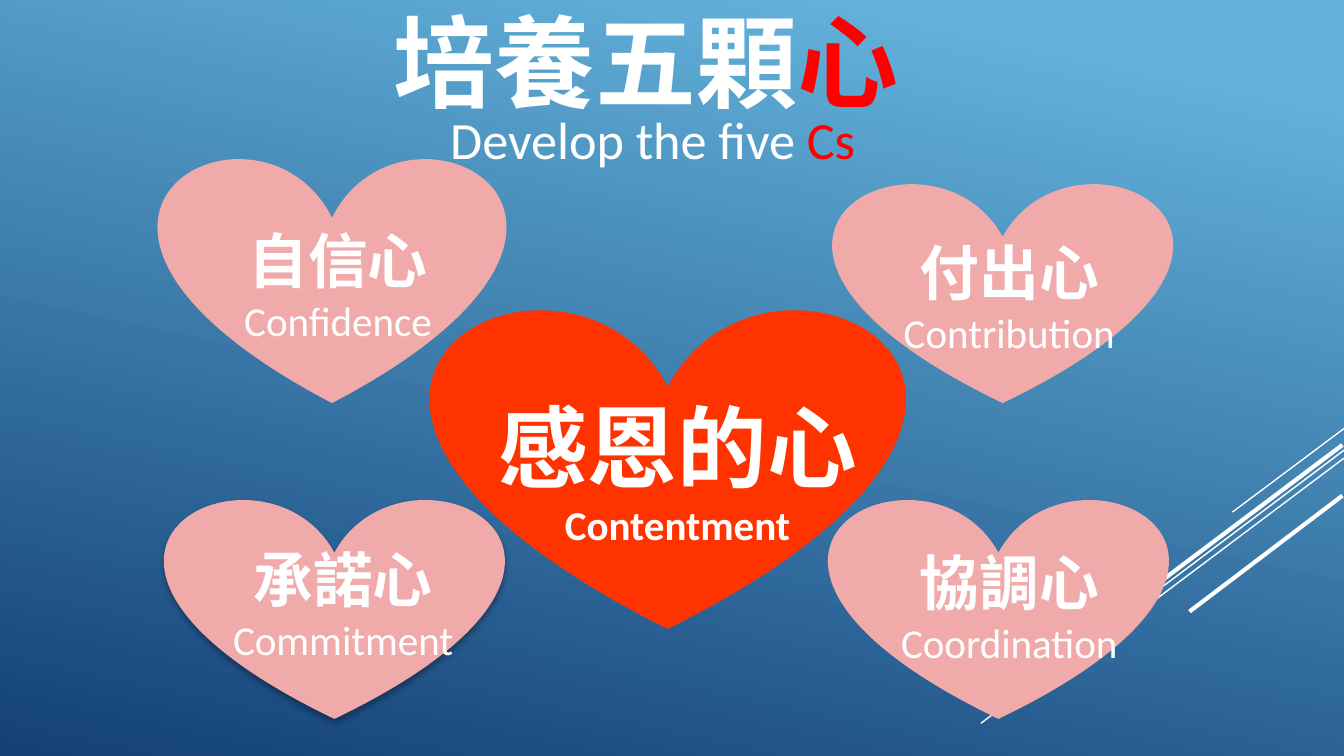
from lxml import etree
from pptx import Presentation
from pptx.dml.color import RGBColor
from pptx.enum.shapes import MSO_CONNECTOR, MSO_SHAPE
from pptx.enum.text import MSO_ANCHOR, MSO_AUTO_SIZE, PP_ALIGN
from pptx.oxml import parse_xml
from pptx.oxml.ns import nsdecls, qn
from pptx.util import Cm, Pt

WHITE = RGBColor(0xFF, 0xFF, 0xFF)
RED = RGBColor(0xFF, 0x00, 0x00)
ORANGE_RED = RGBColor(0xFF, 0x33, 0x00)
PINK = RGBColor(0xF0, 0xAA, 0xAA)
SKY = RGBColor(0x62, 0xB1, 0xDA)
NAVY = RGBColor(0x13, 0x40, 0x77)
FONT = "Calibri"

# Right end, left end (cm) and width (pt) of each streak
STREAKS = [
    ((25.4, 8.1), (23.29, 9.68), 0.75),
    ((25.4, 8.51), (18.54, 13.67), 0.75),
    ((25.4, 8.66), (21.03, 11.94), 0.75),
    ((25.37, 8.41), (21.39, 11.4), 2.25),
    ((25.37, 9.37), (22.48, 11.56), 2.25),
]

# Heart box, label box inside it (cm), Chinese word, English word
PINK_HEARTS = [
    ((3.0, 2.95, 6.55, 4.67), (1.09, 1.16, 4.6, 2.57), "自信心", "Confidence"),
    ((15.75, 3.43, 6.4, 4.19), (0.71, 0.91, 5.23, 2.57), "付出心", "Contribution"),
    ((3.12, 9.4, 6.4, 4.19), (0.94, 0.73, 4.85, 2.57), "承諾心", "Commitment"),
    ((15.67, 9.4, 6.4, 4.19), (0.84, 0.79, 5.13, 2.57), "協調心", "Coordination"),
]


def to_cm(box):
    return [Cm(value) for value in box]


def add_run(paragraph, text, size, color=WHITE, bold=False):
    run = paragraph.add_run()
    run.text = text
    font = run.font
    font.name, font.size, font.bold = FONT, Pt(size), bold
    font.color.rgb = color


def add_text_frame(slide, box):
    text_frame = slide.shapes.add_textbox(*to_cm(box)).text_frame
    text_frame.word_wrap = True
    text_frame.auto_size = MSO_AUTO_SIZE.SHAPE_TO_FIT_TEXT
    return text_frame


def paint_background(slide):
    fill = slide.background.fill
    fill.gradient()
    fill.gradient_angle = 258
    for stop, position, color in zip(fill.gradient_stops, (0.1, 1), (SKY, NAVY)):
        stop.position = position
        stop.color.rgb = color


def place_streaks(slide):
    group = slide.shapes.add_group_shape()
    for start, end, width in STREAKS:
        line = group.shapes.add_connector(MSO_CONNECTOR.STRAIGHT, *to_cm(start + end))
        line.line.color.rgb = WHITE
        line.line.width = Pt(width)
        etree.SubElement(line._element.spPr, qn("a:effectLst"))


def place_heading(slide, title_box, subtitle_box):
    title = slide.shapes.title
    title.left, title.top, title.width, title.height = to_cm(title_box)
    text_frame = title.text_frame
    text_frame.auto_size = MSO_AUTO_SIZE.NONE
    text_frame.vertical_anchor = MSO_ANCHOR.MIDDLE
    paragraph = text_frame.paragraphs[0]
    paragraph.alignment = PP_ALIGN.LEFT
    add_run(paragraph, "培養五顆", 54, bold=True)
    add_run(paragraph, "心", 54, RED, bold=True)

    paragraph = add_text_frame(slide, subtitle_box).paragraphs[0]
    add_run(paragraph, "Develop the five ", 28)
    add_run(paragraph, "Cs", 28, RED)


def place_heart(slide, box, label_box, chinese, english,
                color=PINK, size=32, bold_english=False):
    heart = slide.shapes.add_shape(MSO_SHAPE.HEART, *to_cm(box))
    heart.shadow.inherit = False
    heart.fill.solid()
    heart.fill.fore_color.rgb = color
    heart.line.fill.background()

    # Label, offset from the heart's corner
    left, top, width, height = label_box
    text_frame = add_text_frame(slide, (box[0] + left, box[1] + top, width, height))
    first, second = text_frame.paragraphs[0], text_frame.add_paragraph()
    first.alignment = second.alignment = PP_ALIGN.CENTER
    add_run(first, chinese, size, bold=True)
    add_run(second, english, 22, bold=bold_english)
    return heart


def add_soft_shadow(shape):
    effects = shape._element.spPr.find(qn("a:effectLst"))
    effects.append(parse_xml(
        f'<a:outerShdw {nsdecls("a")} blurRad="{Pt(3.5)}" dist="{Pt(2.2)}" '
        'dir="5400000" rotWithShape="0"><a:srgbClr val="000000">'
        '<a:alpha val="32000"/></a:srgbClr></a:outerShdw>'))


def main():
    presentation = Presentation()
    presentation.slide_width, presentation.slide_height = Cm(25.4), Cm(14.29)
    slide = presentation.slides.add_slide(presentation.slide_layouts[5])

    paint_background(slide)
    place_streaks(slide)
    place_heading(slide, (7.19, -0.46, 18.21, 3.18), (8.26, 1.9, 8.99, 1.45))

    # Large heart in the middle, four small ones around it
    place_heart(slide, (8.15, 5.79, 8.94, 6.1), (0.16, 1.5, 8.99, 3.25),
                "感恩的心", "Contentment", ORANGE_RED, 48, True)
    hearts = [place_heart(slide, *heart) for heart in PINK_HEARTS]
    add_soft_shadow(hearts[2])

    presentation.save("out.pptx")


if __name__ == "__main__":
    main()
